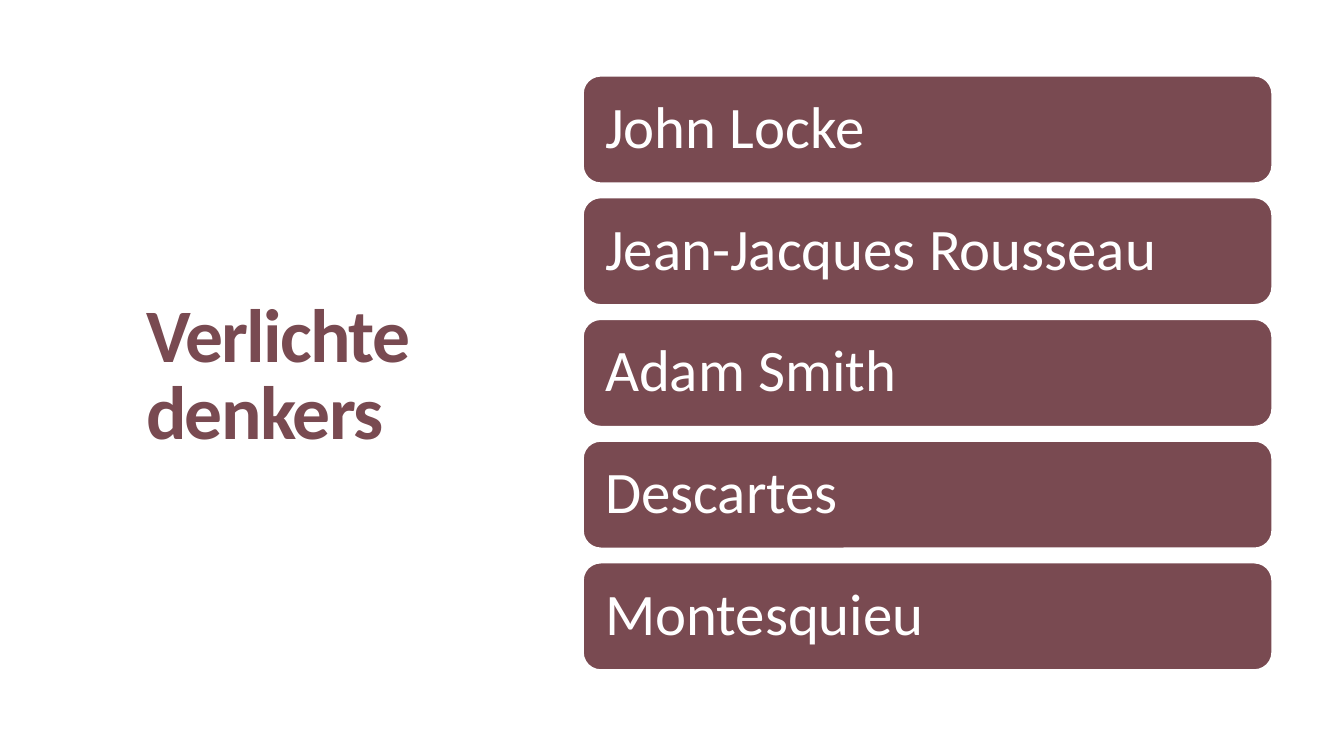
import pptx
import pptx.util
import pptx.dml.color
import pptx.enum.shapes
import pptx.enum.text

Inches, Pt = pptx.util.Inches, pptx.util.Pt
Color = pptx.dml.color.RGBColor.from_string
Anchor = pptx.enum.text.MSO_ANCHOR
Align = pptx.enum.text.PP_ALIGN

THEME = {
    "font": "Calibri",
    "wine": Color("794A51"),
    "white": Color("FFFFFF"),
    "title": Pt(54),
    "name": Pt(42),
}
NAMES = ["John Locke", "Jean-Jacques Rousseau", "Adam Smith", "Descartes", "Montesquieu"]

# Column of bars: first top, last top and equal steps between
LEFT, WIDE, HIGH = 5.78, 6.84, 1.07
FIRST, LAST = 0.75, 5.58
STEP = (LAST - FIRST) / (len(NAMES) - 1)


def write(frame, text, size, color, lead):
    """Put one left-aligned, vertically centred run in the frame."""
    frame.word_wrap = True
    frame.vertical_anchor = Anchor.MIDDLE
    para = frame.paragraphs[0]
    para.alignment = Align.LEFT
    para.line_spacing = lead
    run = para.add_run()
    run.text = text
    run.font.name = THEME["font"]
    run.font.size = size
    run.font.color.rgb = color
    return run


deck = pptx.Presentation()
deck.slide_width, deck.slide_height = Inches(13.33), Inches(7.5)
slide = deck.slides.add_slide(deck.slide_layouts[6])

title = slide.shapes.add_textbox(Inches(1.35), Inches(2.84), Inches(3.58), Inches(1.81))
run = write(title.text_frame, "Verlichte denkers", THEME["title"], THEME["wine"], 0.85)
run.font.bold = True
run.font._element.set("spc", "-120")

for row, name in enumerate(NAMES):
    bar = slide.shapes.add_shape(
        pptx.enum.shapes.MSO_SHAPE.ROUNDED_RECTANGLE,
        Inches(LEFT), Inches(FIRST + row * STEP), Inches(WIDE), Inches(HIGH))
    bar.shadow.inherit = False
    bar.fill.solid()
    bar.fill.fore_color.rgb = THEME["wine"]
    bar.line.color.rgb = THEME["white"]
    bar.line.width = Pt(1.5)
    frame = bar.text_frame
    frame.margin_left = frame.margin_right = Inches(0.17)
    frame.margin_top = frame.margin_bottom = Inches(0.17)
    write(frame, name, THEME["name"], THEME["white"], 0.9)

deck.save("out.pptx")
